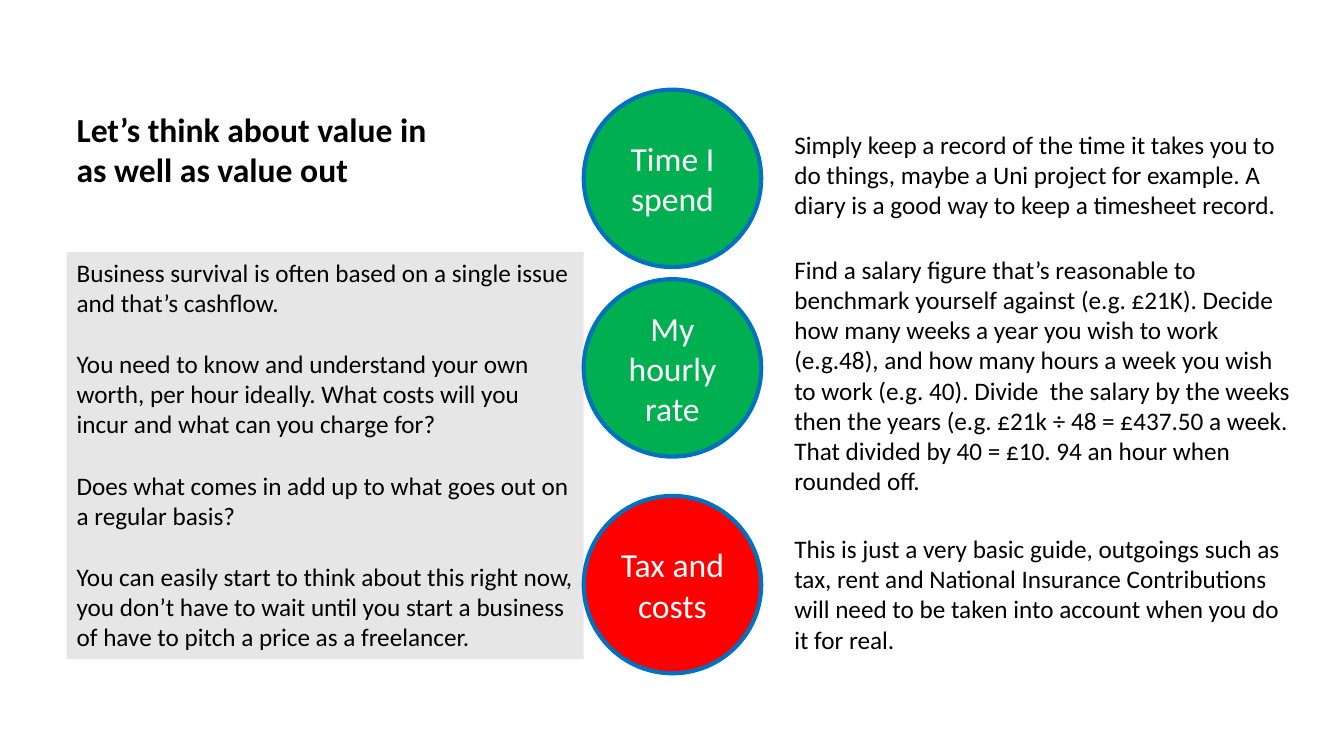
"""Build the slide on value in and value out for freelancers."""
from lxml import etree
from pptx import Presentation
from pptx.dml.color import RGBColor
from pptx.enum.shapes import MSO_SHAPE
from pptx.enum.text import MSO_ANCHOR, MSO_AUTO_SIZE, PP_ALIGN
from pptx.oxml.ns import qn
from pptx.util import Inches, Pt

OVAL = MSO_SHAPE.OVAL
TOP, MIDDLE = MSO_ANCHOR.TOP, MSO_ANCHOR.MIDDLE
LEFT, CENTER = PP_ALIGN.LEFT, PP_ALIGN.CENTER
NO_AUTOFIT = MSO_AUTO_SIZE.NONE

BLACK = RGBColor(0x00, 0x00, 0x00)
WHITE = RGBColor(0xFF, 0xFF, 0xFF)
GREY = RGBColor(0xE7, 0xE6, 0xE6)
GREEN = RGBColor(0x00, 0xB0, 0x50)
RED = RGBColor(0xFF, 0x00, 0x00)
BLUE = RGBColor(0x00, 0x70, 0xC0)

TITLE_LINES = ["Let’s think about value in ", "as well as value out"]
ADVICE = [
    "Business survival is often based on a single issue and that’s cashflow.",
    "You need to know and understand your own worth, per hour ideally. "
    "What costs will you incur and what can you charge for?",
    "Does what comes in add up to what goes out on a regular basis?",
    "You can easily start to think about this right now, you don’t have to wait "
    "until you start a business of have to pitch a price as a freelancer.",
]
STEPS = [
    {"label": "Time I spend", "color": GREEN, "circle_top": 0.89,
     "note_top": 1.23, "note_height": 1.01,
     "note": "Simply keep a record of the time it takes you to do things, maybe a "
             "Uni project for example. A diary is a good way to keep a timesheet record."},
    {"label": "My hourly rate", "color": GREEN, "circle_top": 2.77,
     "note_top": 2.47, "note_height": 2.52,
     "note": "Find a salary figure that’s reasonable to benchmark yourself against "
             "(e.g. £21K). Decide how many weeks a year you wish to work (e.g.48), and "
             "how many hours a week you wish to work (e.g. 40). Divide  the salary by "
             "the weeks then the years (e.g. £21k ÷ 48 = £437.50 a week. That divided "
             "by 40 = £10. 94 an hour when rounded off."},
    {"label": "Tax and costs", "color": RED, "circle_top": 4.92,
     "note_top": 5.24, "note_height": 1.31,
     "note": "This is just a very basic guide, outgoings such as tax, rent and National "
             "Insurance Contributions will need to be taken into account when you do it "
             "for real."},
]

MARGIN, COLUMN_WIDTH = 0.66, 5.13
CIRCLE_LEFT, CIRCLE_SIZE = MARGIN + COLUMN_WIDTH, 1.76
NOTE_LEFT = 7.78
BODY_SIZE, HEADING_SIZE = 18, 24
PARAGRAPH_GAP = Pt(22)


def place(box, left, top, width, height):
    box.left, box.top = Inches(left), Inches(top)
    box.width, box.height = Inches(width), Inches(height)


def write(box, paragraphs, size, color=BLACK, align=LEFT, anchor=TOP, bold=False):
    frame = box.text_frame
    frame.word_wrap = True
    frame.auto_size = NO_AUTOFIT
    frame.vertical_anchor = anchor
    for index, lines in enumerate(paragraphs):
        para = frame.add_paragraph() if index else frame.paragraphs[0]
        para.alignment = align
        para.space_before = PARAGRAPH_GAP if index else Pt(0)
        for number, line in enumerate(lines):
            if number:
                para.add_line_break()
            span = para.add_run()
            span.text = line
            span.font.name = "Calibri"
            span.font.size = Pt(size)
            span.font.bold = bold
            span.font.color.rgb = color


def remove_bullets(box):
    for para in box.text_frame.paragraphs:
        properties = para._p.get_or_add_pPr()
        properties.set("marL", "0")
        properties.set("indent", "0")
        etree.SubElement(properties, qn("a:buNone"))


def add_step(page, step):
    circle = page.shapes.add_shape(
        OVAL, Inches(CIRCLE_LEFT), Inches(step["circle_top"]),
        Inches(CIRCLE_SIZE), Inches(CIRCLE_SIZE))
    circle.shadow.inherit = False
    circle.fill.solid()
    circle.fill.fore_color.rgb = step["color"]
    circle.line.color.rgb = BLUE
    circle.line.width = Pt(3)
    write(circle, [[step["label"]]], HEADING_SIZE, WHITE, CENTER, MIDDLE)

    note = page.shapes.add_textbox(
        Inches(NOTE_LEFT), Inches(step["note_top"]),
        Inches(COLUMN_WIDTH), Inches(step["note_height"]))
    write(note, [[step["note"]]], BODY_SIZE)


def main():
    deck = Presentation()
    deck.slide_width, deck.slide_height = Inches(13.33), Inches(7.5)
    page = deck.slides.add_slide(deck.slide_layouts[1])

    title = page.shapes.title
    place(title, MARGIN, 1.03, 7.63, 0.91)
    write(title, [TITLE_LINES], HEADING_SIZE, bold=True)

    advice = page.placeholders[1]
    place(advice, MARGIN, 2.5, COLUMN_WIDTH, 4.04)
    advice.fill.solid()
    advice.fill.fore_color.rgb = GREY
    write(advice, [[text] for text in ADVICE], BODY_SIZE)
    remove_bullets(advice)

    for step in STEPS:
        add_step(page, step)
    deck.save("out.pptx")


if __name__ == "__main__":
    main()
